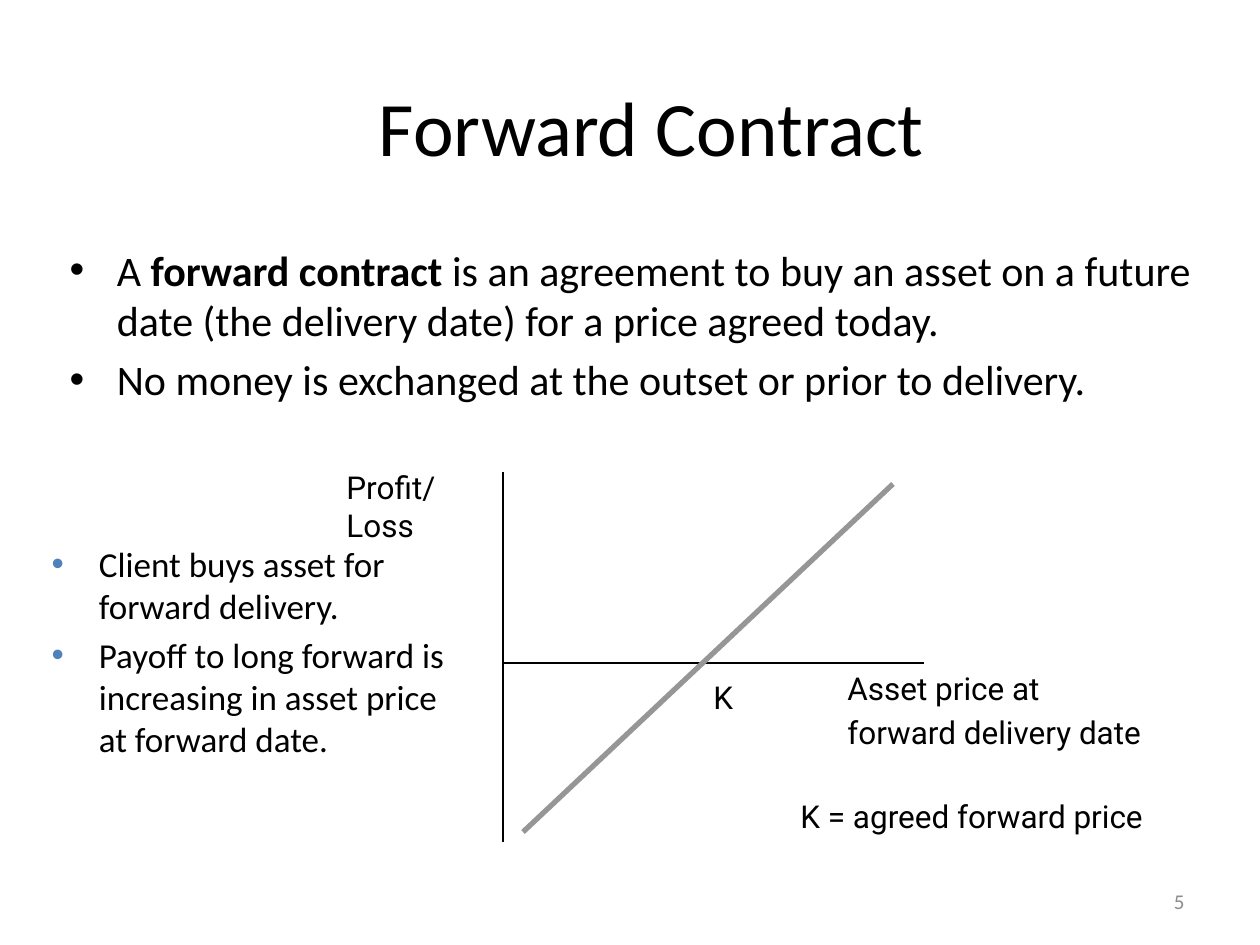
"""Build the Forward Contract slide with its payoff diagram."""
import pptx
import pptx.dml.color
import pptx.enum.shapes
import pptx.enum.text
import pptx.oxml
import pptx.oxml.ns
import pptx.util
import lxml.etree

PX = 914400 / 126
BLACK, GREY, BLUE, PALE = "000000", "969696", "4F81BD", "8C8C8C"
ALIGN = pptx.enum.text.PP_ALIGN
ANCHOR = pptx.enum.text.MSO_ANCHOR


def px(*lengths):
    return [pptx.util.Emu(round(length * PX)) for length in lengths]


def color(code):
    return pptx.dml.color.RGBColor.from_string(code)


def add_element(parent, tag, **attributes):
    return lxml.etree.SubElement(parent, pptx.oxml.ns.qn(tag), **attributes)


class SlideWriter:
    text_font = "Calibri"
    label_font = "Roboto"

    def __init__(self, page):
        self.page = page

    def style(self, para, size, name, code=BLACK):
        para.font.size = pptx.util.Pt(size)
        para.font.name = name
        para.font.color.rgb = color(code)

    def place(self, box, frame):
        box.left, box.top, box.width, box.height = px(*frame)
        box.text_frame.auto_size = pptx.enum.text.MSO_AUTO_SIZE.NONE

    def title(self, text, frame):
        box = self.page.shapes.title
        self.place(box, frame)
        box.text_frame.text = text
        box.text_frame.vertical_anchor = ANCHOR.MIDDLE
        para = box.text_frame.paragraphs[0]
        para.alignment = ALIGN.CENTER
        self.style(para, 44, self.text_font)

    def bullets(self, index, items, frame, size, bullet=None):
        box = self.page.placeholders[index]
        self.place(box, frame)
        for number, spans in enumerate(items):
            text = box.text_frame
            para = text.add_paragraph() if number else text.paragraphs[0]
            if bullet:
                properties = para._p.get_or_add_pPr()
                add_element(add_element(properties, "a:buClr"), "a:srgbClr", val=bullet)
            self.style(para, size, self.text_font)
            for words, bold in spans:
                span = para.add_run()
                span.text = words
                if bold:
                    span.font.bold = True

    def label(self, lines, frame, wrap=False):
        box = self.page.shapes.add_textbox(*px(*frame))
        box.text_frame.text = "\n".join(lines)
        box.text_frame.word_wrap = wrap
        for para in box.text_frame.paragraphs:
            para.space_before = pptx.util.Pt(3.6)
            self.style(para, 18, self.label_font)

    def page_number(self, text, frame):
        box = self.page.shapes.add_textbox(*px(*frame))
        box.text_frame.text = text
        box.text_frame.word_wrap = True
        box.text_frame.vertical_anchor = ANCHOR.MIDDLE
        para = box.text_frame.paragraphs[0]
        para.alignment = ALIGN.RIGHT
        self.style(para, 12, self.text_font, PALE)

    def line(self, start, end, code=BLACK, width=0.75):
        straight = pptx.enum.shapes.MSO_CONNECTOR.STRAIGHT
        line = self.page.shapes.add_connector(straight, *px(*start, *end))
        line.line.color.rgb = color(code)
        line.line.width = pptx.util.Pt(width)
        add_element(line._element.spPr, "a:effectLst")


def main():
    deck = pptx.Presentation()
    deck.slide_width, deck.slide_height = px(1260, 945)
    two_content = deck.slide_layouts[3]
    writer = SlideWriter(deck.slides.add_slide(two_content))

    writer.title("Forward Contract", (116, 63, 1071, 126))
    definition = [
        [("A ", False), ("forward contract ", True),
         ("is an agreement to buy an asset on a future date "
          "(the delivery date) for a price agreed today.", False)],
        [("No money is exchanged at the outset or prior to delivery.", False)],
    ]
    writer.bullets(1, definition, (57, 238, 1153, 546), 24)
    writer.page_number("5", (903, 876, 294, 50))

    origin_x, origin_y = 503, 663
    writer.line((origin_x, 472), (origin_x, 842))
    writer.line((origin_x, origin_y), (924, origin_y))
    writer.line((523, 832), (893, 484), GREY, 3)

    writer.label(["K = agreed forward price"], (788, 791, 377, 50))
    writer.label(["Asset price at", "forward delivery date"], (835, 663, 321, 96))
    writer.label(["Profit/Loss"], (334, 462, 171, 50), wrap=True)
    writer.label(["K"], (701, 672, 44, 50))

    payoff = [
        [("Client buys asset for forward delivery.", False)],
        [("Payoff to long forward is increasing in asset price "
          "at forward date.", False)],
    ]
    writer.bullets(2, payoff, (39, 536, 431, 346), 20, BLUE)
    deck.save("out.pptx")


if __name__ == "__main__":
    main()
